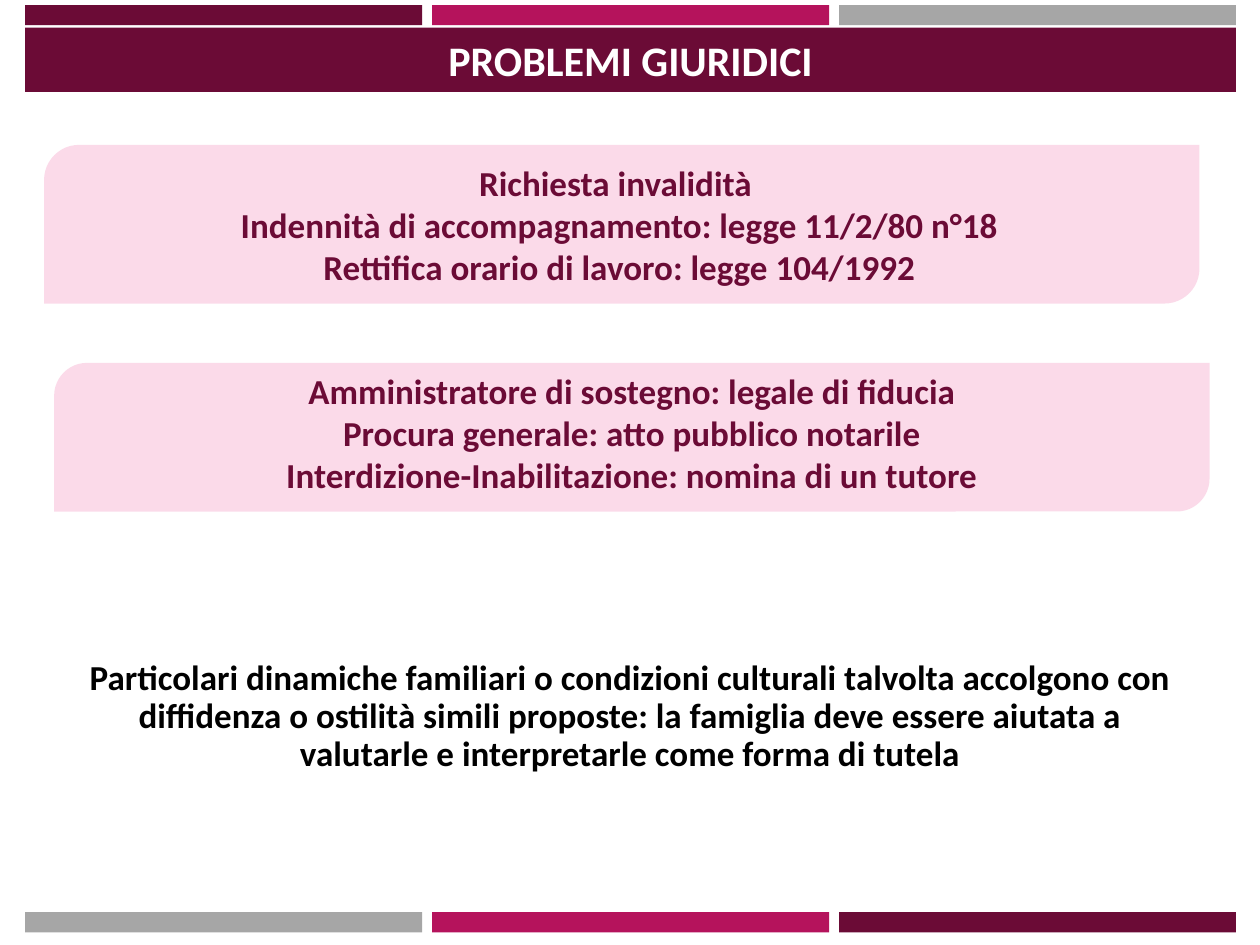
import pptx
import pptx.util
import pptx.dml.color
import pptx.enum.shapes
import pptx.enum.text
import pptx.oxml.ns
import lxml.etree

Inches = pptx.util.Inches
RGBColor = pptx.dml.color.RGBColor
SHAPES = pptx.enum.shapes.MSO_SHAPE

PLUM = RGBColor(0x6B, 0x0B, 0x36)
MAGENTA = RGBColor(0xB5, 0x13, 0x5C)
GREY = RGBColor(0xA6, 0xA6, 0xA6)
PINK = RGBColor(0xF5, 0x9D, 0xC5)
WHITE = RGBColor(0xFF, 0xFF, 0xFF)
BLACK = RGBColor(0x00, 0x00, 0x00)

prs = pptx.Presentation()
prs.slide_width = Inches(10)
prs.slide_height = Inches(7.5)
slide = prs.slides.add_slide(prs.slide_layouts[6])


def add_block(kind, left, top, width, height, color):
    block = slide.shapes.add_shape(
        kind, Inches(left), Inches(top), Inches(width), Inches(height))
    block.shadow.inherit = False
    block.fill.solid()
    block.fill.fore_color.rgb = color
    block.line.fill.background()
    return block


def write_text(holder, lines, size=20, color=PLUM, spacing=None,
               anchor=pptx.enum.text.MSO_ANCHOR.TOP):
    frame = holder.text_frame
    frame.word_wrap = True
    frame.vertical_anchor = anchor
    for i, line in enumerate(lines):
        paragraph = frame.paragraphs[0] if i == 0 else frame.add_paragraph()
        paragraph.alignment = pptx.enum.text.PP_ALIGN.CENTER
        paragraph.line_spacing = spacing
        run = paragraph.add_run()
        run.text = line
        run.font.name = "Calibri"
        run.font.size = pptx.util.Pt(size)
        run.font.bold = True
        run.font.color.rgb = color


# Coloured strips along the top and bottom edges
for top, colors in ((0.04, (PLUM, MAGENTA, GREY)),
                    (7.24, (GREY, MAGENTA, PLUM))):
    for column, color in enumerate(colors):
        add_block(SHAPES.RECTANGLE, 0.2 + column * 3.23, top, 3.15, 0.16, color)

# Title band
title = add_block(SHAPES.RECTANGLE, 0.2, 0.22, 9.61, 0.51, PLUM)
write_text(title, ["PROBLEMI GIURIDICI"], size=24, color=WHITE,
           anchor=pptx.enum.text.MSO_ANCHOR.MIDDLE)

# Translucent panels, each with its text box: (panel place, text place, lines)
panels = [
    ((0.35, 1.15, 9.17, 1.26), (0.75, 1.23, 8.27, 1.1),
     ["Richiesta invalidità",
      " Indennità di accompagnamento: legge 11/2/80 n°18",
      " Rettifica orario di lavoro: legge 104/1992"]),
    ((0.43, 2.88, 9.17, 1.18), (0.43, 2.88, 9.17, 1.1),
     ["Amministratore di sostegno: legale di fiducia",
      "Procura generale: atto pubblico notarile",
      "Interdizione-Inabilitazione: nomina di un tutore"]),
]
for panel_place, text_place, lines in panels:
    panel = add_block(SHAPES.ROUND_2_DIAG_RECTANGLE, *panel_place, PINK)
    panel.adjustments[0] = 0.221
    panel.adjustments[1] = 0
    tint = panel.fill._xPr.find(".//" + pptx.oxml.ns.qn("a:srgbClr"))
    lxml.etree.SubElement(tint, pptx.oxml.ns.qn("a:alpha"), val="37000")
    measures = slide.shapes.add_textbox(*map(Inches, text_place))
    write_text(measures, lines)

# Closing remark
remark = slide.shapes.add_textbox(
    Inches(0.5), Inches(4.38), Inches(9), Inches(2.36))
remark.text_frame.margin_top = Inches(0.86)
write_text(remark, [
    "Particolari dinamiche familiari o condizioni culturali talvolta accolgono "
    "con diffidenza o ostilità simili proposte: la famiglia deve essere aiutata "
    "a valutarle e interpretarle come forma di tutela"],
    color=BLACK, spacing=0.9)

prs.save("out.pptx")
